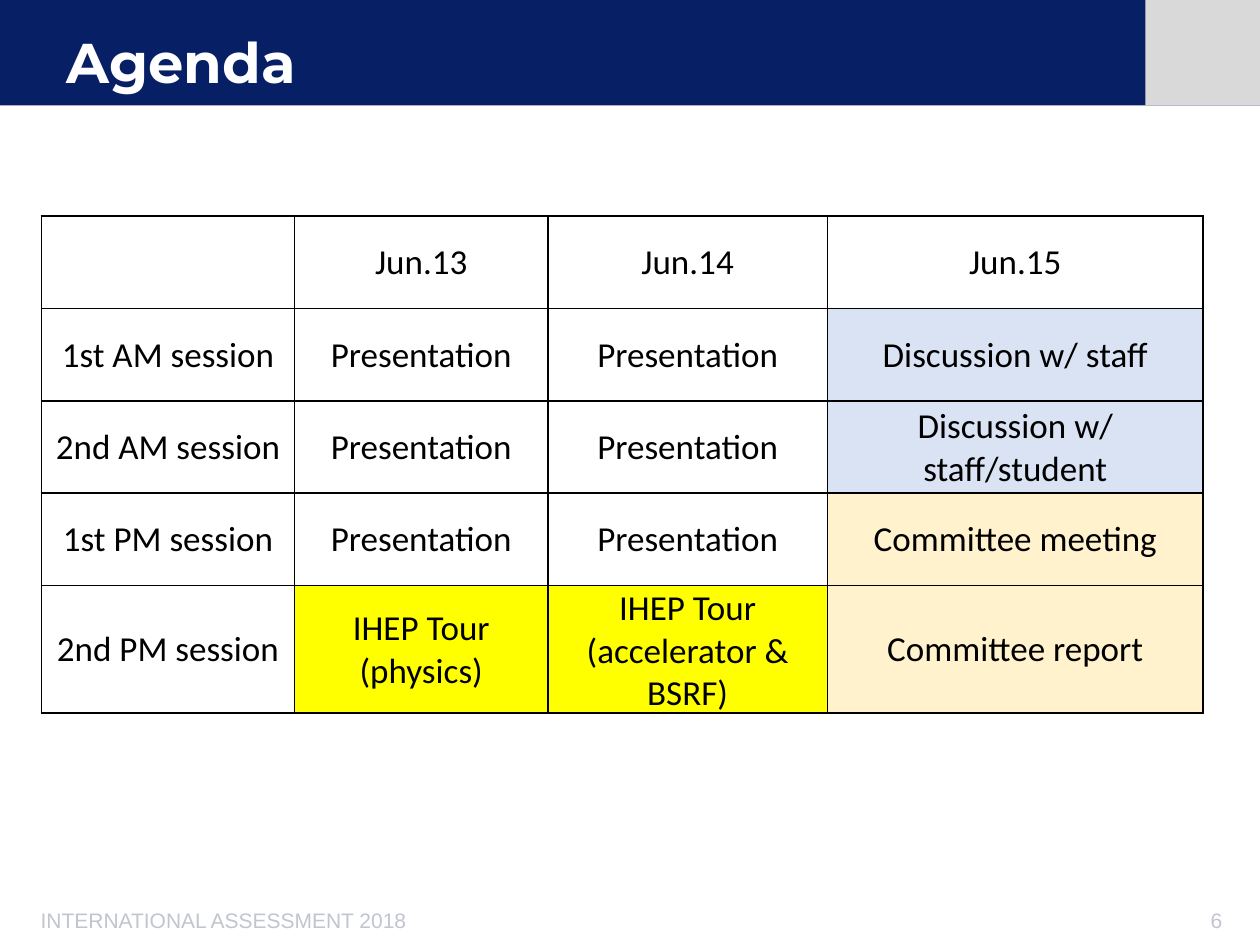
"""Build the agenda slide: header band, session timetable and footer."""
from dataclasses import dataclass
from typing import Optional

from lxml import etree
from pptx import Presentation
from pptx import util as u
from pptx.dml.color import RGBColor
from pptx.enum import shapes, text
from pptx.oxml.ns import qn

BLACK, WHITE, GREY = "000000", "FFFFFF", "C0C5CE"
BLUE, CREAM, YELLOW = "DAE3F3", "FFF2CC", "FFFF00"
CENTER, LEFT, RIGHT = text.PP_ALIGN.CENTER, text.PP_ALIGN.LEFT, text.PP_ALIGN.RIGHT
MIDDLE, TOP = text.MSO_ANCHOR.MIDDLE, text.MSO_ANCHOR.TOP

CELL_FONT = {"name": "Calibri", "size": u.Pt(20), "bold": False}
FOOTER_FONT = {"name": "Arial", "size": u.Pt(12), "bold": False}
TITLE_FONT = {"name": "Montserrat", "size": u.Pt(32), "bold": True}
CELL_FORMAT = {
    "vertical_anchor": MIDDLE,
    "margin_left": u.Pt(0.7),
    "margin_top": u.Pt(0.7),
    "margin_right": u.Pt(0.7),
    "margin_bottom": u.Pt(0),
}


@dataclass
class Box:
    left: float
    top: float
    width: float
    height: float

    def lengths(self) -> list:
        return [u.Pt(value) for value in (self.left, self.top, self.width, self.height)]


@dataclass
class Band:
    box: Box
    fill: str


@dataclass
class Label:
    box: Box
    content: str
    font: dict
    color: str
    alignment: text.PP_ALIGN
    anchor: text.MSO_ANCHOR = TOP
    wrap: bool = True
    line_spacing: float = 1.0


@dataclass
class Entry:
    content: str
    fill: Optional[str] = None


BANDS = [
    Band(Box(0, 0, 720, 60.3), "071F65"),
    Band(Box(654.5, 0, 65.5, 60.3), "D9D9D9"),
]
LABELS = [
    Label(Box(0, 514.8, 255.6, 21.6), "INTERNATIONAL ASSESSMENT 2018", FOOTER_FONT, GREY, CENTER),
    Label(Box(676, 514.8, 29.5, 21.6), "6", FOOTER_FONT, GREY, RIGHT, wrap=False),
    Label(Box(31, 14.4, 619, 46), "Agenda", TITLE_FONT, WHITE, LEFT, MIDDLE, line_spacing=0.9),
]
TALK = Entry("Presentation")
AGENDA = [
    [Entry(""), Entry("Jun.13"), Entry("Jun.14"), Entry("Jun.15")],
    [Entry("1st AM session"), TALK, TALK, Entry("Discussion w/ staff", BLUE)],
    [Entry("2nd AM session"), TALK, TALK, Entry("Discussion w/ staff/student", BLUE)],
    [Entry("1st PM session"), TALK, TALK, Entry("Committee meeting", CREAM)],
    [
        Entry("2nd PM session"),
        Entry("IHEP Tour (physics)", YELLOW),
        Entry("IHEP Tour (accelerator & BSRF)", YELLOW),
        Entry("Committee report", CREAM),
    ],
]
COLUMN_WIDTHS = [144.7, 144.7, 159.8, 214.6]
ROW_HEIGHT = 52.8


def rgb(color: str) -> RGBColor:
    return RGBColor.from_string(color)


def apply(target, values: dict) -> None:
    for name, value in values.items():
        setattr(target, name, value)


def write(paragraph, content: str, font: dict, color: str, alignment: text.PP_ALIGN) -> None:
    paragraph.alignment = alignment
    if content:
        run = paragraph.add_run()
        run.text = content
        apply(run.font, font)
        run.font.color.rgb = rgb(color)
    else:
        apply(paragraph.font, font)


def draw_band(slide, band: Band) -> None:
    shape = slide.shapes.add_shape(shapes.MSO_SHAPE.RECTANGLE, *band.box.lengths())
    shape.shadow.inherit = False
    shape.fill.solid()
    shape.fill.fore_color.rgb = rgb(band.fill)
    shape.line.fill.background()


def draw_label(slide, label: Label) -> None:
    frame = slide.shapes.add_textbox(*label.box.lengths()).text_frame
    apply(frame, {"word_wrap": label.wrap, "vertical_anchor": label.anchor})
    paragraph = frame.paragraphs[0]
    paragraph.line_spacing = label.line_spacing
    write(paragraph, label.content, label.font, label.color, label.alignment)


def add_borders(cell, color: str, width: float) -> None:
    properties = cell._tc.get_or_add_tcPr()
    for position, side in enumerate(("a:lnL", "a:lnR", "a:lnT", "a:lnB")):
        line = etree.Element(qn(side), w=str(u.Pt(width)))
        fill = etree.SubElement(line, qn("a:solidFill"))
        etree.SubElement(fill, qn("a:srgbClr"), val=color)
        properties.insert(position, line)


def draw_cell(cell, entry: Entry) -> None:
    apply(cell, CELL_FORMAT)
    if entry.fill:
        cell.fill.solid()
        cell.fill.fore_color.rgb = rgb(entry.fill)
    else:
        cell.fill.background()
    add_borders(cell, BLACK, 1)
    write(cell.text_frame.paragraphs[0], entry.content, CELL_FONT, BLACK, CENTER)


def draw_agenda(slide, left: float, top: float) -> None:
    box = Box(left, top, sum(COLUMN_WIDTHS), ROW_HEIGHT * len(AGENDA))
    table = slide.shapes.add_table(len(AGENDA), len(COLUMN_WIDTHS), *box.lengths()).table
    apply(table, {"first_row": False, "horz_banding": False})
    for column, width in zip(table.columns, COLUMN_WIDTHS):
        column.width = u.Pt(width)
    for row, entries in zip(table.rows, AGENDA):
        row.height = u.Pt(ROW_HEIGHT)
        for cell, entry in zip(row.cells, entries):
            draw_cell(cell, entry)


def main() -> None:
    presentation = Presentation()
    apply(presentation, {"slide_width": u.Pt(720), "slide_height": u.Pt(540)})
    slide = presentation.slides.add_slide(presentation.slide_layouts[6])
    for band in BANDS:
        draw_band(slide, band)
    for label in LABELS:
        draw_label(slide, label)
    draw_agenda(slide, 23.7, 123.5)
    presentation.save("out.pptx")


if __name__ == "__main__":
    main()
